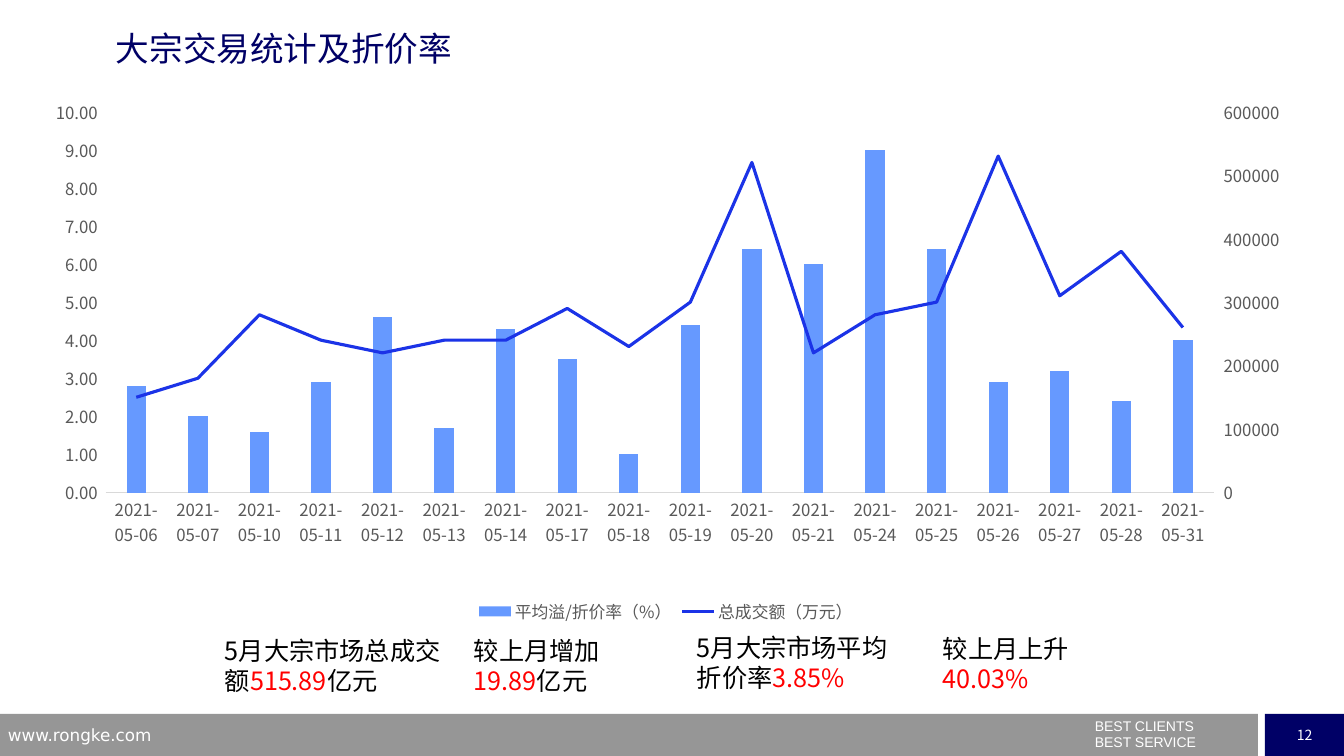
from copy import deepcopy

from lxml import etree
from pptx import Presentation
from pptx.chart.data import CategoryChartData
from pptx.dml.color import RGBColor
from pptx.enum.chart import XL_CHART_TYPE as ChartType
from pptx.enum.chart import XL_LEGEND_POSITION as LegendPosition
from pptx.enum.chart import XL_MARKER_STYLE as Marker
from pptx.enum.chart import XL_TICK_MARK as TickMark
from pptx.enum.shapes import MSO_SHAPE as Preset
from pptx.enum.text import MSO_ANCHOR as Anchor
from pptx.enum.text import MSO_AUTO_SIZE as AutoSize
from pptx.enum.text import PP_ALIGN as Align
from pptx.oxml import parse_xml
from pptx.oxml.ns import nsdecls, qn
from pptx.util import Pt

PX = 914400 / 100.8
COLORS = {
    "navy": "000066", "gray": "969696", "white": "FFFFFF", "black": "000000",
    "red": "FF0000", "label": "595959", "axis": "D9D9D9",
    "bar": "6699FF", "line": "1B33E7",
}
CJK = "Noto Sans CJK SC"

DAYS = ["06", "07", "10", "11", "12", "13", "14", "17", "18",
        "19", "20", "21", "24", "25", "26", "27", "28", "31"]
RATES = [2.8, 2, 1.6, 2.9, 4.6, 1.7, 4.3, 3.5, 1,
         4.4, 6.4, 6, 9, 6.4, 2.9, 3.2, 2.4, 4]
TURNOVER = [150000, 180000, 280000, 240000, 220000, 240000, 240000, 290000, 230000,
            300000, 520000, 220000, 280000, 300000, 530000, 310000, 380000, 260000]

# Each finding: box, then paragraphs made of (text, colour) spans
FINDINGS = [
    ((215, 630, 240, 72), [[("5月大宗市场总成交额", "black"), ("515.89", "red"), ("亿元", "black")]]),
    ((464, 630, 194, 72), [[("较上月增加", "black")], [("19.89", "red"), ("亿元", "black")]]),
    ((687, 627, 219, 72), [[("5月大宗市场平均折价率", "black"), ("3.85%", "red")]]),
    ((933, 628, 166, 72), [[("较上月上升", "black"), ("40.03%", "red")]]),
]


def px(*lengths):
    return [round(length * PX) for length in lengths]


def rgb(name):
    return RGBColor.from_string(COLORS[name])


def set_font(font, size, color, name=CJK):
    font.size = Pt(size)
    font.name = name
    font.color.rgb = rgb(color)


def write(frame, paragraphs, size=18, font=CJK, align=Align.LEFT, anchor=Anchor.TOP,
          wrap=True, spacing=None, before=0):
    """Fill a text frame with paragraphs of (text, colour) spans."""
    frame.word_wrap = wrap
    frame.auto_size = AutoSize.NONE
    frame.vertical_anchor = anchor
    for index, spans in enumerate(paragraphs):
        para = frame.add_paragraph() if index else frame.paragraphs[0]
        para.alignment = align
        if spacing:
            para.line_spacing = spacing
        if index and before:
            para.space_before = Pt(before)
        for text, color in spans:
            span = para.add_run()
            span.text = text
            set_font(span.font, size, color, font)
            etree.SubElement(span.font._element, qn("a:ea")).set("typeface", font)


def add_text(page, box, paragraphs, **style):
    write(page.shapes.add_textbox(*px(*box)).text_frame, paragraphs, **style)


def add_block(page, box, color):
    block = page.shapes.add_shape(Preset.RECTANGLE, *px(*box))
    block.shadow.inherit = False
    block.fill.solid()
    block.fill.fore_color.rgb = rgb(color)
    block.line.fill.background()
    return block


def build_footer(page, box):
    left, top, width, height = box
    add_block(page, (left, top, 1258, height), "gray")
    number = add_block(page, (left + 1265, top, width - 1265, height), "navy")
    write(number.text_frame, [[("12", "white")]], size=10,
          align=Align.CENTER, anchor=Anchor.MIDDLE, wrap=False)
    add_text(page, (left + 1085, top + 6, 258, 36),
             [[("BEST CLIENTS", "white")], [("BEST SERVICE", "white")]],
             size=10, font="Arial", spacing=0.5, before=5)
    add_text(page, (left - 2, top + 6, 325, 26), [[("www.rongke.com", "white")]],
             size=12, font="DejaVu Sans")


def build_title(page, box):
    title = page.shapes.title
    title.left, title.top, title.width, title.height = px(*box)
    frame = title.text_frame
    frame.margin_left = frame.margin_top = frame.margin_right = frame.margin_bottom = 0
    write(frame, [[("大宗交易统计及折价率", "navy")]], size=24)


def format_axes(chart):
    dates, rates = chart.category_axis, chart.value_axis
    for axis in (dates, rates):
        axis.major_tick_mark = axis.minor_tick_mark = TickMark.NONE
        axis.has_major_gridlines = False
        set_font(axis.tick_labels.font, 12, "label")
    dates.format.line.color.rgb = rgb("axis")
    dates.format.line.width = Pt(0.75)
    rates.format.line.fill.background()
    rates.minimum_scale, rates.maximum_scale, rates.major_unit = 0, 10, 1
    rates.tick_labels.number_format = "0.00_ "
    rates.tick_labels.number_format_is_linked = False


def move_to_line(chart):
    """Turn the second series into a line on a right-hand axis."""
    bars = chart.plots[0]._element
    series = bars.findall(qn("c:ser"))[1]
    for bar_only in series.findall(qn("c:invertIfNegative")):
        series.remove(bar_only)
    line_plot = parse_xml(
        f'<c:lineChart {nsdecls("c")}><c:grouping val="standard"/><c:varyColors val="0"/>'
        '<c:marker val="1"/><c:axId val="5001"/><c:axId val="5002"/></c:lineChart>')
    line_plot.insert(2, series)
    bars.addnext(line_plot)

    area = line_plot.getparent()
    dates, values = (deepcopy(area.find(qn(tag))) for tag in ("c:catAx", "c:valAx"))
    changes = [
        (dates, {"axId": "5001", "crossAx": "5002", "delete": "1"}),
        (values, {"axId": "5002", "crossAx": "5001", "axPos": "r", "crosses": "max",
                  "majorTickMark": "out", "majorUnit": "100000", "max": "600000"}),
    ]
    for axis, settings in changes:
        for tag, value in settings.items():
            for item in axis.iter(qn("c:" + tag)):
                item.set("val", value)
    values.find(qn("c:numFmt")).set("formatCode", "General")
    area.findall(qn("c:valAx"))[-1].addnext(values)
    values.addnext(dates)


def place_plot(chart, left, top, width, height):
    area = chart.plots[0]._element.getparent()
    for old in area.findall(qn("c:layout")):
        area.remove(old)
    parts = {"x": left, "y": top, "w": width, "h": height}
    sizes = "".join(f'<c:{key} val="{value}"/>' for key, value in parts.items())
    area.insert(0, parse_xml(
        f'<c:layout {nsdecls("c")}><c:manualLayout><c:layoutTarget val="inner"/>'
        f'<c:xMode val="edge"/><c:yMode val="edge"/>{sizes}</c:manualLayout></c:layout>'))


def build_chart(page, box):
    data = CategoryChartData()
    data.categories = [f"2021-05-{day}" for day in DAYS]
    data.add_series("平均溢/折价率（%）", RATES)
    data.add_series("总成交额（万元）", TURNOVER)
    chart = page.shapes.add_chart(ChartType.COLUMN_CLUSTERED, *px(*box), data).chart
    chart.has_title = False
    set_font(chart.font, 10, "black")
    format_axes(chart)
    move_to_line(chart)
    place_plot(chart, 0.058, 0.035, 0.874, 0.712)

    # Bars and line
    bar_plot, line_plot = chart.plots
    bar_plot.gap_width = 219
    bar_plot.vary_by_categories = False
    bar_fill = bar_plot.series[0].format.fill
    bar_fill.solid()
    bar_fill.fore_color.rgb = rgb("bar")
    turnover = line_plot.series[0]
    turnover.smooth = False
    turnover.marker.style = Marker.NONE
    turnover.format.line.color.rgb = rgb("line")
    turnover.format.line.width = Pt(2.25)

    # Legend
    chart.has_legend = True
    chart.legend.position = LegendPosition.BOTTOM
    chart.legend.include_in_layout = False
    set_font(chart.legend.font, 12, "label")


def build_findings(page):
    for box, paragraphs in FINDINGS:
        add_text(page, box, paragraphs)


def main():
    deck = Presentation()
    deck.slide_width, deck.slide_height = px(1344, 756)
    page = deck.slides.add_slide(deck.slide_layouts[5])
    build_footer(page, (0, 714, 1344, 42))
    build_title(page, (116, 28, 907, 51))
    build_findings(page)
    build_chart(page, (32, 93, 1268, 535))
    deck.save("out.pptx")


if __name__ == "__main__":
    main()
